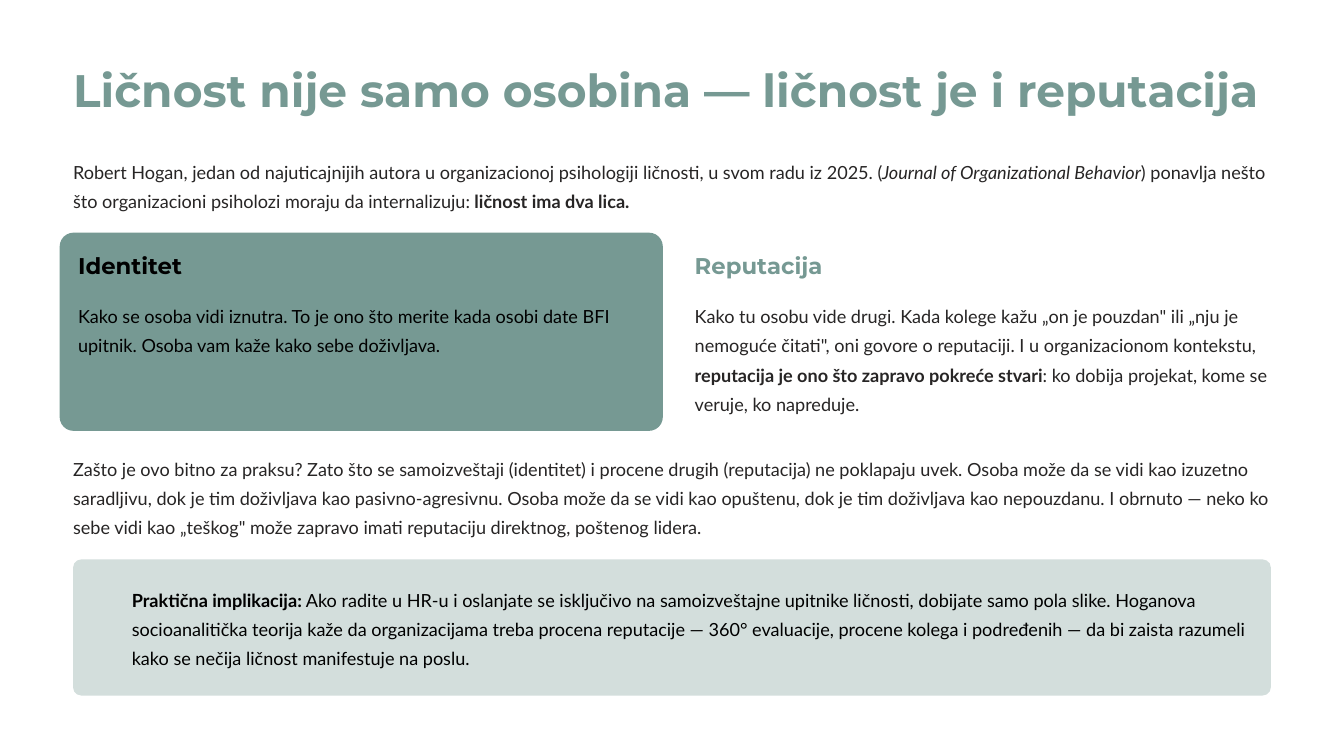
from dataclasses import dataclass

from pptx import Presentation
from pptx.dml.color import RGBColor
from pptx.enum.shapes import MSO_SHAPE
from pptx.enum.text import MSO_ANCHOR
from pptx.slide import Slide
from pptx.util import Emu, Inches, Pt

SLIDE_WIDTH, SLIDE_HEIGHT = Inches(16), Inches(9)


@dataclass(frozen=True)
class TextStyle:
    font: str
    size: float
    leading: float
    bold: bool = False
    wrap: bool = True


@dataclass(frozen=True)
class Theme:
    paper: str = "FFFFFF"
    sage: str = "769993"
    mist: str = "D3DEDC"
    ink: str = "272525"
    black: str = "000000"
    title: TextStyle = TextStyle("Montserrat", 39, 48.5, bold=True, wrap=False)
    heading: TextStyle = TextStyle("Montserrat", 19.5, 24, bold=True, wrap=False)
    body: TextStyle = TextStyle("Lato", 15.5, 25)


THEME = Theme()


@dataclass(frozen=True)
class Span:
    text: str
    bold: bool = False
    italic: bool = False


@dataclass(frozen=True)
class Panel:
    """Rounded box; lengths are percentages of the slide's width and height."""
    left: float
    top: float
    width: float
    height: float
    rounding: float
    fill: str


@dataclass(frozen=True)
class Passage:
    """Text block; lengths are percentages, height follows from its lines."""
    left: float
    top: float
    width: float
    lines: int
    style: TextStyle
    color: str
    spans: tuple[Span, ...]


@dataclass(frozen=True)
class Face:
    """One of the two sides of personality, set as a column."""
    left: float
    width: float
    lines: int
    heading: str
    heading_color: str
    body_color: str
    spans: tuple[Span, ...]


MARGIN = 5.44
CONTENT_WIDTH = 100 - 2 * MARGIN
HEADING_TOP, FACE_BODY_TOP = 33.22, 39.44
HEADING_WIDTH = 16.94

PANELS = (
    Panel(4.44, 30.78, 44.88, 26.22, 0.07, THEME.sage),
    Panel(MARGIN, 74, CONTENT_WIDTH, 18, 0.06, THEME.mist),
)

FACES = (
    Face(5.81, 42.19, 2, "Identitet", THEME.black, THEME.black, (
        Span("Kako se osoba vidi iznutra. To je ono što merite kada osobi date BFI "
             "upitnik. Osoba vam kaže kako sebe doživljava."),
    )),
    Face(51.69, 42.94, 4, "Reputacija", THEME.sage, THEME.ink, (
        Span("Kako tu osobu vide drugi. Kada kolege kažu „on je pouzdan\" ili „nju je "
             "nemoguće čitati\", oni govore o reputaciji. I u organizacionom kontekstu, "),
        Span("reputacija je ono što zapravo pokreće stvari", bold=True),
        Span(": ko dobija projekat, kome se veruje, ko napreduje."),
    )),
)

PASSAGES = (
    Passage(MARGIN, 8, 88.25, 1, THEME.title, THEME.sage, (
        Span("Ličnost nije samo osobina — ličnost je i reputacija"),
    )),
    Passage(MARGIN, 20.33, CONTENT_WIDTH, 2, THEME.body, THEME.ink, (
        Span("Robert Hogan, jedan od najuticajnijih autora u organizacionoj psihologiji "
             "ličnosti, u svom radu iz 2025. ("),
        Span("Journal of Organizational Behavior", italic=True),
        Span(") ponavlja nešto što organizacioni psiholozi moraju da internalizuju: "),
        Span("ličnost ima dva lica.", bold=True),
    )),
    Passage(MARGIN, 59.67, CONTENT_WIDTH, 3, THEME.body, THEME.ink, (
        Span("Zašto je ovo bitno za praksu? Zato što se samoizveštaji (identitet) i procene "
             "drugih (reputacija) ne poklapaju uvek. Osoba može da se vidi kao izuzetno "
             "saradljivu, dok je tim doživljava kao pasivno-agresivnu. Osoba može da se vidi "
             "kao opuštenu, dok je tim doživljava kao nepouzdanu. I obrnuto — neko ko sebe "
             "vidi kao „teškog\" može zapravo imati reputaciju direktnog, poštenog lidera."),
    )),
    Passage(9.81, 77, 83.38, 3, THEME.body, THEME.black, (
        Span("Praktična implikacija:", bold=True),
        Span(" Ako radite u HR-u i oslanjate se isključivo na samoizveštajne upitnike "
             "ličnosti, dobijate samo pola slike. Hoganova socioanalitička teorija kaže da "
             "organizacijama treba procena reputacije — 360° evaluacije, procene kolega i "
             "podređenih — da bi zaista razumeli kako se nečija ličnost manifestuje na poslu."),
    )),
)


def across(percent: float) -> Emu:
    return Emu(round(SLIDE_WIDTH * percent / 100))


def down(percent: float) -> Emu:
    return Emu(round(SLIDE_HEIGHT * percent / 100))


def draw_panel(slide: Slide, panel: Panel) -> None:
    box = slide.shapes.add_shape(
        MSO_SHAPE.ROUNDED_RECTANGLE, across(panel.left), down(panel.top),
        across(panel.width), down(panel.height))
    box.adjustments[0] = panel.rounding
    box.shadow.inherit = False
    box.fill.solid()
    box.fill.fore_color.rgb = RGBColor.from_string(panel.fill)
    box.line.fill.background()


def draw_passage(slide: Slide, passage: Passage) -> None:
    style = passage.style
    frame = slide.shapes.add_textbox(
        across(passage.left), down(passage.top), across(passage.width),
        Pt(passage.lines * style.leading)).text_frame
    frame.margin_left = frame.margin_right = frame.margin_top = frame.margin_bottom = 0
    frame.word_wrap = style.wrap
    frame.vertical_anchor = MSO_ANCHOR.TOP
    paragraph = frame.paragraphs[0]
    paragraph.line_spacing = Pt(style.leading)
    paragraph.font.name = style.font
    paragraph.font.size = Pt(style.size)
    paragraph.font.bold = style.bold
    paragraph.font.color.rgb = RGBColor.from_string(passage.color)
    for span in passage.spans:
        run = paragraph.add_run()
        run.text = span.text
        if span.bold:
            run.font.bold = True
        if span.italic:
            run.font.italic = True


def draw_face(slide: Slide, face: Face) -> None:
    draw_passage(slide, Passage(face.left, HEADING_TOP, HEADING_WIDTH, 1, THEME.heading,
                                face.heading_color, (Span(face.heading),)))
    draw_passage(slide, Passage(face.left, FACE_BODY_TOP, face.width, face.lines,
                                THEME.body, face.body_color, face.spans))


def main() -> None:
    deck = Presentation()
    deck.slide_width, deck.slide_height = SLIDE_WIDTH, SLIDE_HEIGHT
    slide = deck.slides.add_slide(deck.slide_layouts[6])
    slide.background.fill.solid()
    slide.background.fill.fore_color.rgb = RGBColor.from_string(THEME.paper)
    for panel in PANELS:
        draw_panel(slide, panel)
    for face in FACES:
        draw_face(slide, face)
    for passage in PASSAGES:
        draw_passage(slide, passage)
    deck.save("out.pptx")


if __name__ == "__main__":
    main()
